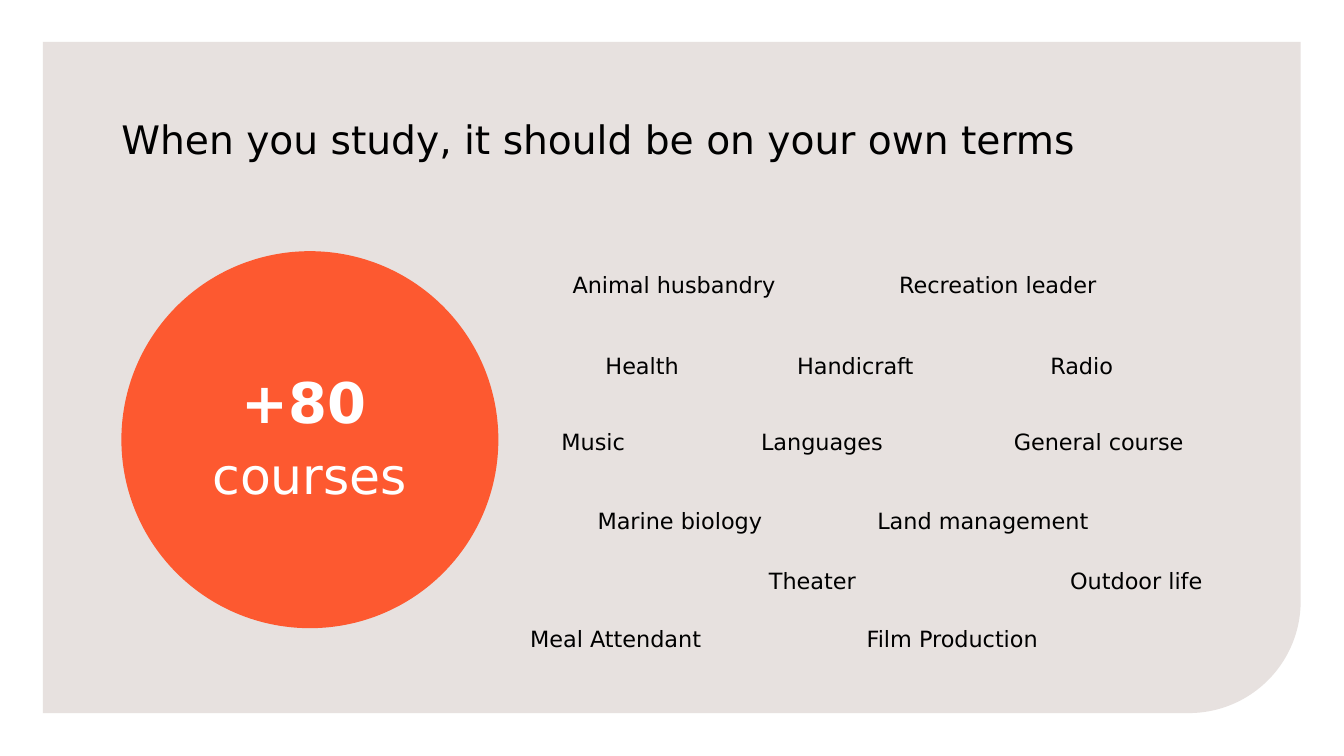
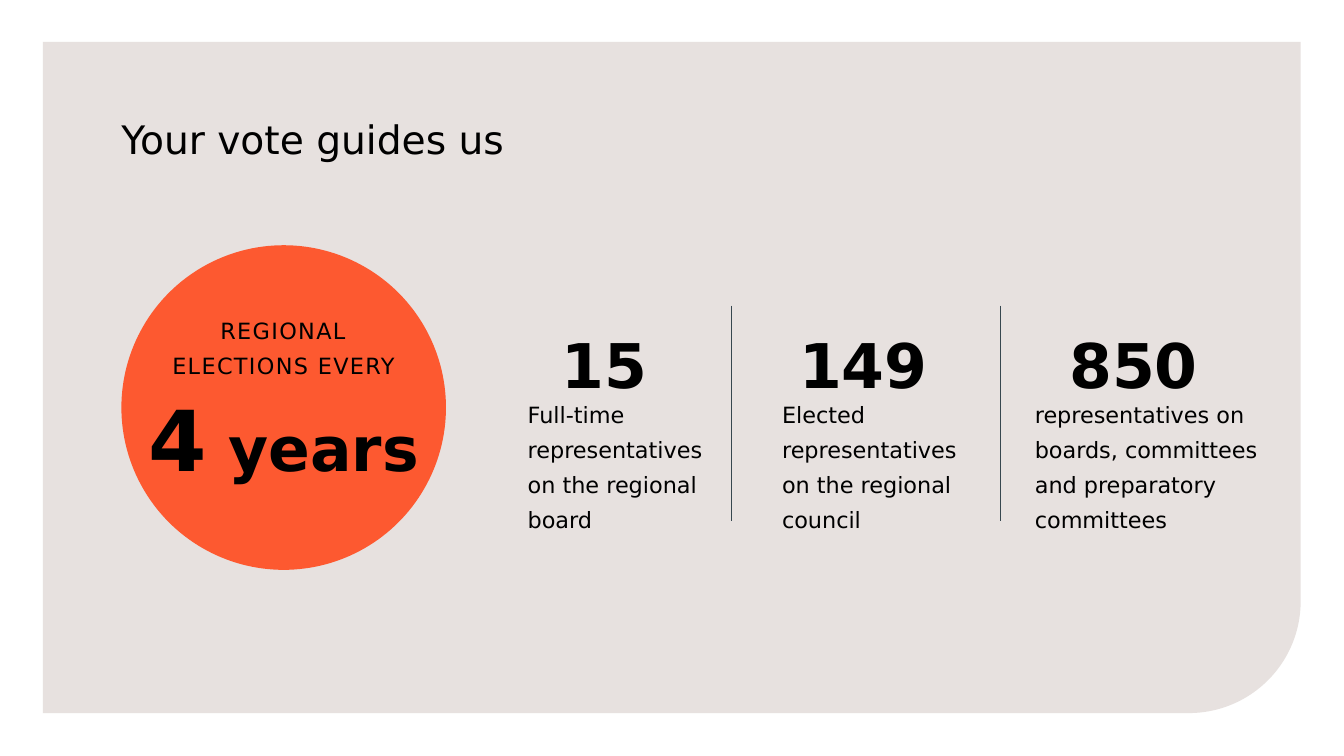
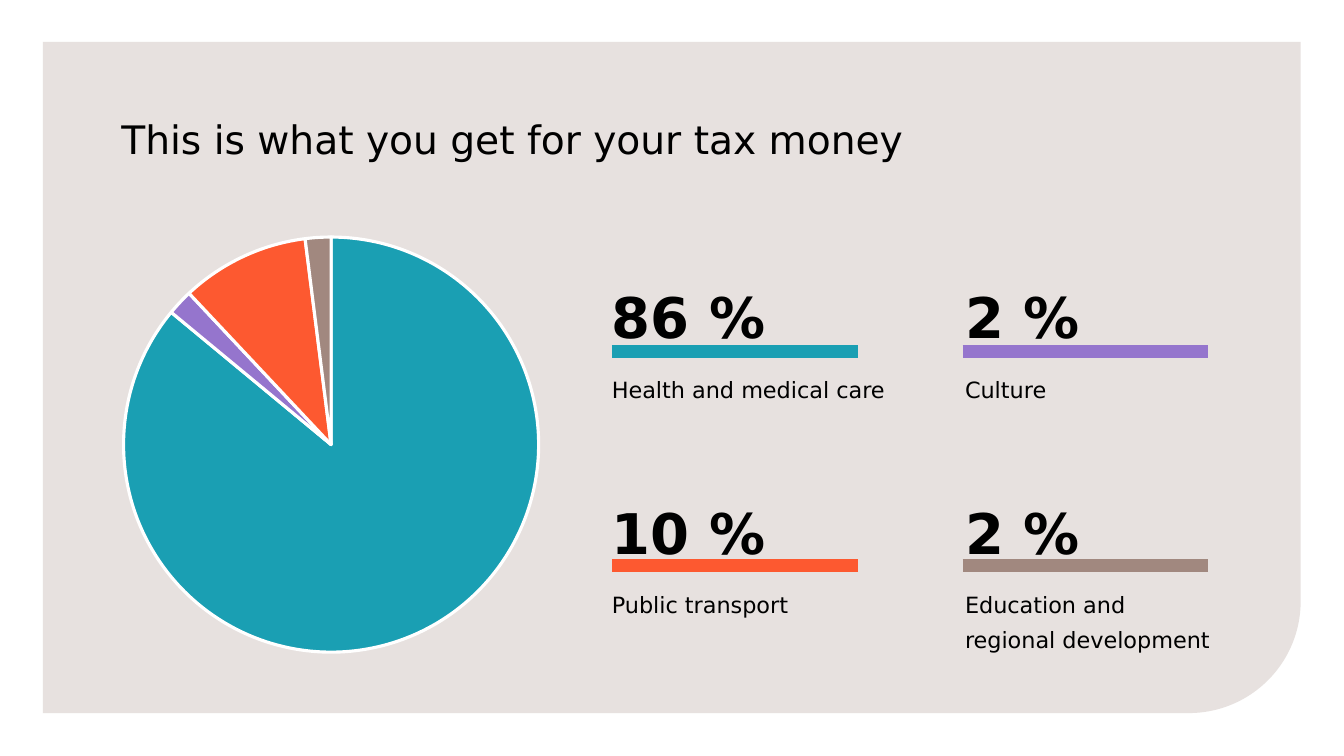
from lxml.etree import SubElement
from pptx import Presentation
from pptx.chart.data import CategoryChartData
from pptx.dml.color import RGBColor
from pptx.enum.chart import XL_CHART_TYPE
from pptx.enum.shapes import MSO_CONNECTOR, MSO_SHAPE
from pptx.enum.text import MSO_ANCHOR, PP_ALIGN
from pptx.oxml import parse_xml
from pptx.oxml.ns import nsdecls, qn
from pptx.util import Cm, Pt

FONT = "DejaVu Sans"
HUES = {
    "black": "000000", "white": "FFFFFF", "panel": "E7E1DF",
    "orange": "FD5930", "teal": "1A9FB3", "purple": "9575CD",
    "brown": "A1887F", "slate": "37474F",
}
LEFT = 3.06  # shared left margin, cm


def hue(name):
    return RGBColor.from_string(HUES[name])


# Text
def set_frame(frame, anchor=MSO_ANCHOR.TOP):
    frame.word_wrap = True
    frame.vertical_anchor = anchor
    frame.margin_left = frame.margin_right = 0
    frame.margin_top = frame.margin_bottom = 0


def add_run(par, text, size, bold=False, color="black", track=0):
    for i, part in enumerate(text.split("\n")):
        if i:
            par.add_line_break()
        run = par.add_run()
        run.text = part
        font = run.font
        font.name, font.size, font.bold = FONT, Pt(size), bold
        font.color.rgb = hue(color)
        if track:
            run._r.get_or_add_rPr().set("spc", str(track * 100))


def fill_text(shape, runs, center=False):
    """Each run is a tuple of text, size and optional style."""
    set_frame(shape.text_frame)
    par = shape.text_frame.paragraphs[0]
    par.alignment = PP_ALIGN.CENTER if center else PP_ALIGN.LEFT
    par.line_spacing = 1.3
    par.space_before = Pt(10)
    for run in runs:
        add_run(par, *run)


def add_text(slide, box, *runs, center=False):
    fill_text(slide.shapes.add_textbox(*map(Cm, box)), runs, center)


def add_tag(slide, box, name):
    """Add a course name in a clear outline."""
    left, top, width, height = map(Cm, box)
    right, base = left + width, top + height
    path = slide.shapes.build_freeform(left, top)
    path.add_line_segments([(right, top), (right, base), (left, base)])
    tag = path.convert_to_shape()
    tag.shadow.inherit = False
    tag.fill.background()
    tag.line.fill.background()
    fill_text(tag, [(name, 16)])


# Shapes
def add_shape(slide, kind, box, color):
    shape = slide.shapes.add_shape(kind, *map(Cm, box))
    shape.shadow.inherit = False
    shape.fill.solid()
    shape.fill.fore_color.rgb = hue(color)
    shape.line.fill.background()
    return shape


def add_disc(slide, top, size):
    add_shape(slide, MSO_SHAPE.OVAL, (LEFT, top, size, size), "orange")


def add_line(slide, start, end, color, width):
    line = slide.shapes.add_connector(
        MSO_CONNECTOR.STRAIGHT, *map(Cm, (*start, *end)))
    line.line.color.rgb = hue(color)
    line.line.width = Pt(width)
    SubElement(line._element.spPr, qn("a:effectLst"))


# Shared slide base
def add_panel(slide):
    """Place the rounded panel on the layout, behind all slides."""
    panel = add_shape(slide, MSO_SHAPE.ROUND_1_RECTANGLE,
                      (1.08, 1.06, 31.7, 16.91), "panel")
    panel._element.spPr.xfrm.set("flipV", "1")
    slide.slide_layout.shapes._spTree.insert(2, panel._element)


def add_slide(deck, text, width=27.91):
    slide = deck.slides.add_slide(deck.slide_layouts[5])
    title = slide.shapes.title
    title.left, title.top = Cm(LEFT), Cm(1.18)
    title.width, title.height = Cm(width), Cm(2.91)
    set_frame(title.text_frame, MSO_ANCHOR.BOTTOM)
    par = title.text_frame.paragraphs[0]
    par.alignment = PP_ALIGN.LEFT
    par.line_spacing = 1.1
    add_run(par, text, 28)
    return slide


# Chart
def add_pie(slide, box, values, colors):
    data = CategoryChartData()
    data.categories = [str(i + 1) for i in range(len(values))]
    data.add_series("Series 1", values)
    chart = slide.shapes.add_chart(
        XL_CHART_TYPE.PIE, *map(Cm, box), data).chart
    chart.has_legend = chart.has_title = False
    chart.font.name, chart.font.size = FONT, Pt(10)
    chart.font.color.rgb = hue("black")
    plot = chart.plots[0]
    plot.vary_by_categories = True
    for i, color in enumerate(colors):
        form = plot.series[0].points[i].format
        form.fill.solid()
        form.fill.fore_color.rgb = hue(color)
        form.line.color.rgb = hue("white")
        form.line.width = Pt(2.25)
    # Fixed plot area
    area = chart._chartSpace.chart.plotArea
    for old in area.findall(qn("c:layout")):
        area.remove(old)
    spots = {"x": 0.18, "y": 0.03, "w": 0.64, "h": 0.94}
    parts = "".join(f'<c:{k} val="{v}"/>' for k, v in spots.items())
    area.insert(0, parse_xml(
        f'<c:layout {nsdecls("c")}><c:manualLayout>'
        '<c:layoutTarget val="inner"/><c:xMode val="edge"/>'
        f'<c:yMode val="edge"/>{parts}</c:manualLayout></c:layout>'))


# Slides
def add_study(deck):
    slide = add_slide(
        deck, "When you study, it should be on your own terms", 29.62)
    add_panel(slide)
    add_disc(slide, 6.33, 9.5)
    add_text(slide, (6.09, 8.76, 3.28, 1.96), ("+80", 40, True, "white"))
    add_text(slide, (LEFT, 10.73, 9.5, 1.96),
             ("courses", 36, False, "white"), center=True)
    # Top of each row: left, width and name of its courses
    rows = {
        6.63: [(14.43, 6.58, "Animal husbandry"),
               (22.66, 6.2, "Recreation leader")],
        8.66: [(15.26, 3.51, "Health"), (20.09, 4.04, "Handicraft"),
               (26.47, 2.69, "Radio")],
        10.58: [(14.15, 3.3, "Music"), (19.18, 6.2, "Languages"),
                (25.55, 6.2, "General course")],
        12.57: [(15.06, 4.78, "Marine biology"),
                (22.11, 6.2, "Land management")],
        14.1: [(19.38, 3.3, "Theater"), (26.97, 4.34, "Outdoor life")],
        15.56: [(13.36, 6.2, "Meal Attendant"),
                (21.84, 6.2, "Film Production")],
    }
    for top, row in rows.items():
        for left, width, name in row:
            add_tag(slide, (left, top, width, 1.24), name)


def add_vote(deck):
    slide = add_slide(deck, "Your vote guides us")
    add_disc(slide, 6.18, 8.18)
    add_text(slide, (4.05, 7.78, 6.2, 1.27),
             ("REGIONAL ELECTIONS EVERY", 16, False, "black", 1),
             center=True)
    add_text(slide, (LEFT, 9.01, 8.18, 3.78),
             ("4", 60, True), (" years", 44, True), center=True)
    # Number left, label left, label width, number, label
    stats = [
        (12.14, 13.3, 4.67, "15",
         "Full-time representatives on the regional board"),
        (18.66, 19.71, 4.67, "149",
         "Elected representatives \non the regional council"),
        (25.47, 26.08, 5.84, "850",
         "representatives on boards, committees and preparatory committees"),
    ]
    for left, inset, width, count, label in stats:
        add_text(slide, (left, 7.67, 6.2, 1.78),
                 (count, 44, True), center=True)
        add_text(slide, (inset, 9.9, width, 3.76), (label, 16))
    for x in (18.44, 25.22):
        add_line(slide, (x, 7.7), (x, 13.13), "slate", 0.5)


def add_tax(deck):
    slide = add_slide(deck, "This is what you get for your tax money")
    shares = [
        (86, "teal", "Health and medical care"),
        (2, "purple", "Culture"),
        (10, "orange", "Public transport"),
        (2, "brown", "Education and regional development"),
    ]
    values, colors, _ = zip(*shares)
    add_pie(slide, (0, 5.64, 16.69, 11.13), values, colors)
    # Two by two grid: text left, bar left, text width
    cols = [(15.42, 15.42, 6.93), (24.32, 24.26, 6.25)]
    # Tops of number, bar and label in each row
    rows = [(6.62, 8.86, 9.27), (12.05, 14.25, 14.69)]
    for i, (value, color, label) in enumerate(shares):
        left, bar, width = cols[i % 2]
        top, mid, low = rows[i // 2]
        add_text(slide, (left, top, width, 1.3), (f"{value} %", 40, True))
        add_line(slide, (bar, mid), (bar + 6.19, mid), color, 9)
        add_text(slide, (left, low, width, 1.3), (label, 16))


def main():
    deck = Presentation()
    deck.slide_width, deck.slide_height = Cm(33.87), Cm(19.05)
    add_study(deck)
    add_vote(deck)
    add_tax(deck)
    deck.save("out.pptx")


if __name__ == "__main__":
    main()
